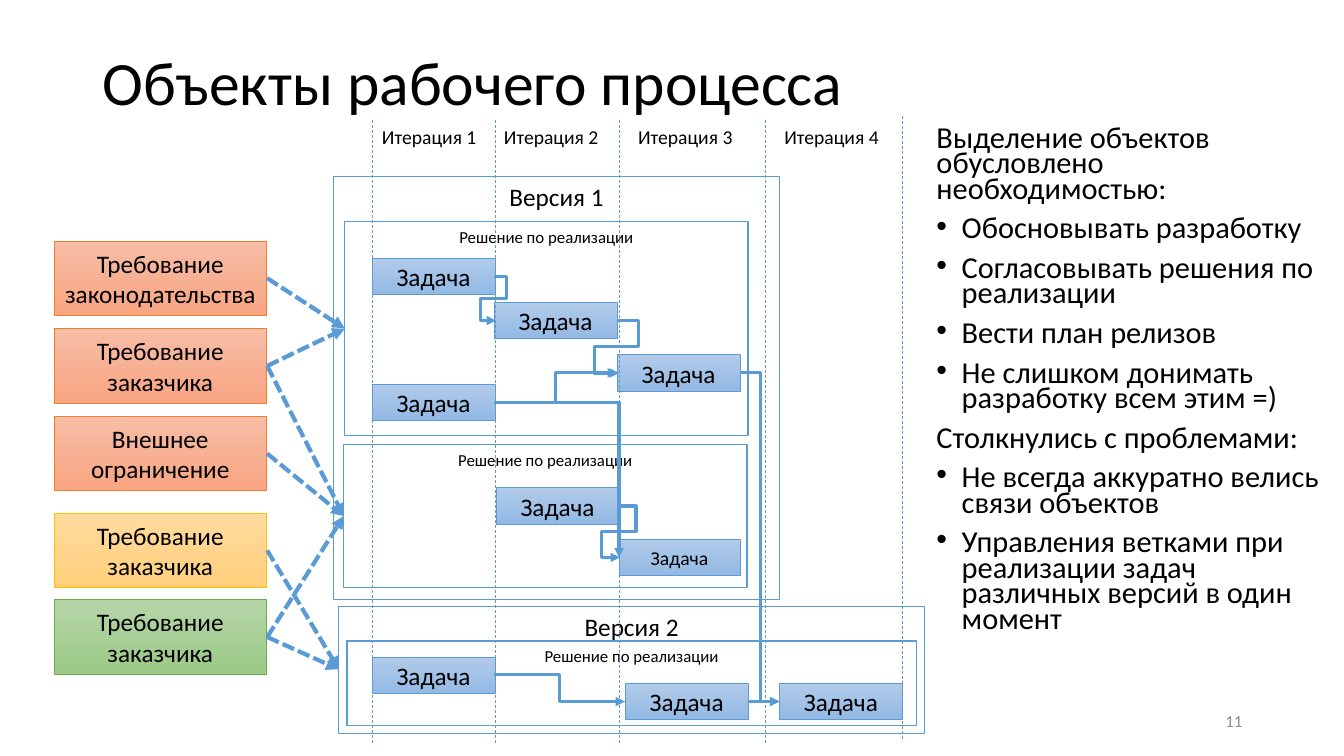
import pptx
import pptx.util
import pptx.dml.color
import pptx.enum.dml
import pptx.enum.shapes
import pptx.enum.text
import pptx.oxml.ns
import lxml.etree

Inches = pptx.util.Inches
Pt = pptx.util.Pt
RGBColor = pptx.dml.color.RGBColor
Align = pptx.enum.text.PP_ALIGN
Anchor = pptx.enum.text.MSO_ANCHOR
Dash = pptx.enum.dml.MSO_LINE
Kind = pptx.enum.shapes.MSO_CONNECTOR
RECT = pptx.enum.shapes.MSO_SHAPE.RECTANGLE
qn = pptx.oxml.ns.qn

BLACK = RGBColor(0x00, 0x00, 0x00)
WHITE = RGBColor(0xFF, 0xFF, 0xFF)
GREY = RGBColor(0x8C, 0x8C, 0x8C)
BLUE = RGBColor(0x5B, 0x9B, 0xD5)
ORANGE = RGBColor(0xED, 0x7D, 0x31)
GOLD = RGBColor(0xFF, 0xC0, 0x00)
GREEN = RGBColor(0x70, 0xAD, 0x47)
BLUES = (RGBColor(0xB1, 0xCB, 0xE9), RGBColor(0x93, 0xB9, 0xE4))
REDS = (RGBColor(0xF7, 0xBD, 0xA5), RGBColor(0xF8, 0xA5, 0x82))
GOLDS = (RGBColor(0xFF, 0xDB, 0x9E), RGBColor(0xFF, 0xD0, 0x7C))
GREENS = (RGBColor(0xB5, 0xD5, 0xA7), RGBColor(0x9C, 0xC9, 0x87))

deck = pptx.Presentation()
deck.slide_width = Inches(13.33)
deck.slide_height = Inches(7.5)
slide = deck.slides.add_slide(deck.slide_layouts[6])


def put(text, left, top, width, height, size=18, color=BLACK, fill=None,
        line=None, weight=1, align=Align.LEFT, anchor=Anchor.TOP,
        space=1.0, before=0):
    place = [Inches(n) for n in (left, top, width, height)]
    if fill is None:
        shape = slide.shapes.add_textbox(*place)
    else:
        shape = slide.shapes.add_shape(RECT, *place)
        shape.shadow.inherit = False
        shape.line.color.rgb = line
        shape.line.width = Pt(weight)
        if isinstance(fill, RGBColor):
            shape.fill.solid()
            shape.fill.fore_color.rgb = fill
        else:
            shape.fill.gradient()
            shape.fill.gradient_angle = 270
            for stop, shade in zip(shape.fill.gradient_stops, fill):
                stop.color.rgb = shade
    frame = shape.text_frame
    frame.word_wrap = True
    frame.vertical_anchor = anchor
    frame.text = text
    for para in frame.paragraphs:
        para.alignment = align
        para.line_spacing = space
        para.space_before = Pt(before)
        font = para.runs[0].font
        font.name = "Calibri"
        font.size = Pt(size)
        font.color.rgb = color
    return shape


def link(start, end, weight, bends=(), dash=None, arrow=True):
    kind = Kind.ELBOW if bends else Kind.STRAIGHT
    wire = slide.shapes.add_connector(kind, *[Inches(n) for n in start + end])
    wire.line.color.rgb = BLUE
    wire.line.width = Pt(weight)
    if dash:
        wire.line.dash_style = dash
    props = wire.element.spPr
    if arrow:
        lxml.etree.SubElement(props.find(qn("a:ln")), qn("a:tailEnd"), type="triangle")
    lxml.etree.SubElement(props, qn("a:effectLst"))
    if bends:
        ratios = [(bend - start[0]) / (end[0] - start[0]) for bend in bends]
        geom = props.find(qn("a:prstGeom"))
        if len(bends) == 2:
            geom.set("prst", "bentConnector5")
            ratios.insert(1, 0.5)
        guides = geom.find(qn("a:avLst"))
        for i, ratio in enumerate(ratios, 1):
            name = f"adj{i}"
            lxml.etree.SubElement(guides, qn("a:gd"), name=name,
                                  fmla=f"val {round(ratio * 100000)}")


solve = "Решение по реализации"
for text, size, *place in [
    ("Версия 2", 18, 3.36, 6.02, 5.81, 1.26),
    (solve, 12, 3.44, 6.36, 5.65, 0.84),
    ("Версия 1", 18, 3.31, 1.75, 4.42, 4.2),
    (solve, 12, 3.41, 4.41, 4, 1.42),
    (solve, 12, 3.42, 2.2, 4, 2.12),
]:
    put(text, *place, size=size, fill=WHITE, line=BLUE, align=Align.CENTER)

put("Объекты рабочего процесса", 0.92, 0.32, 11.32, 1.06, size=44,
    anchor=Anchor.MIDDLE, space=0.9)

for text, top, fill, line in [
    ("Требование законодательства", 2.39, REDS, ORANGE),
    ("Требование заказчика", 3.26, REDS, ORANGE),
    ("Внешнее ограничение", 4.13, REDS, ORANGE),
    ("Требование заказчика", 5.09, GOLDS, GOLD),
    ("Требование заказчика", 5.95, GREENS, GREEN),
]:
    put(text, 0.54, top, 2.1, 0.74, fill=fill, line=line, weight=0.5,
        align=Align.CENTER, anchor=Anchor.MIDDLE)

for left, top, width, size in [
    (3.69, 2.56, 1.22, 18), (4.9, 3, 1.22, 18), (6.12, 3.52, 1.22, 18),
    (3.69, 3.81, 1.22, 18), (4.92, 4.84, 1.22, 18), (6.14, 5.35, 1.2, 14),
    (3.69, 6.52, 1.22, 18), (6.2, 6.78, 1.22, 18), (7.73, 6.78, 1.22, 18),
]:
    put("Задача", left, top, width, 0.36, size=size, fill=BLUES, line=BLUE,
        weight=0.5, align=Align.CENTER, anchor=Anchor.MIDDLE)

for start, end, bends in [
    ((4.9, 2.74), (4.92, 3.18), (5.02, 4.77)),
    ((6.12, 3.18), (6.14, 3.7), (6.33, 5.9)),
    ((4.9, 3.99), (6.12, 3.7), (5.51,)),
    ((6.14, 5.02), (6.15, 5.53), (6.31, 5.96)),
    ((4.9, 3.99), (6.14, 5.53), (6.14,)),
    ((4.9, 6.69), (6.2, 6.96), (5.55,)),
    ((7.42, 6.96), (7.73, 6.96), (7.57,)),
    ((7.34, 3.7), (7.73, 6.96), (7.54,)),
]:
    link(start, end, 2.25, bends=bends)

for x, top in [(3.69, 1.19), (4.91, 1.19), (6.14, 1.19), (7.59, 1.19), (8.95, 1.15)]:
    link((x, top), (x, top + 6.19), 0.5, dash=Dash.DASH, arrow=False)

first, second, third = (3.42, 3.26), (3.41, 5.12), (3.36, 6.64)
for y, goal in [(2.76, first), (3.63, first), (6.32, second), (5.46, third),
                (4.5, second), (6.32, third), (3.63, second)]:
    link((2.65, y), goal, 3, dash=Dash.SQUARE_DOT)

for i, left in enumerate((3.69, 4.9, 6.23, 7.68), 1):
    put(f"Итерация {i}", left, 1.19, 1.21, 0.34, size=14)

notes = [
    "Выделение объектов обусловлено необходимостью:",
    "Обосновывать разработку",
    "Согласовывать решения по реализации",
    "Вести план релизов",
    "Не слишком донимать разработку всем этим =)",
    "Столкнулись с проблемами:",
    "Не всегда аккуратно велись связи объектов",
    "Управления ветками при реализации задач различных версий в один момент",
]
body = put("\n".join(notes), 9.19, 1.22, 4.03, 6.05, size=21.7, space=0.7, before=10)
for para in body.text_frame.paragraphs:
    if not para.text.endswith(":"):
        props = para._p.get_or_add_pPr()
        props.set("marL", str(Inches(0.25)))
        props.set("indent", str(-Inches(0.25)))
        lxml.etree.SubElement(props, qn("a:buFont"), typeface="Arial")
        lxml.etree.SubElement(props, qn("a:buChar"), char="•")

put("11", 9.42, 6.95, 3, 0.4, size=12, color=GREY, align=Align.RIGHT,
    anchor=Anchor.MIDDLE)

deck.save("out.pptx")
